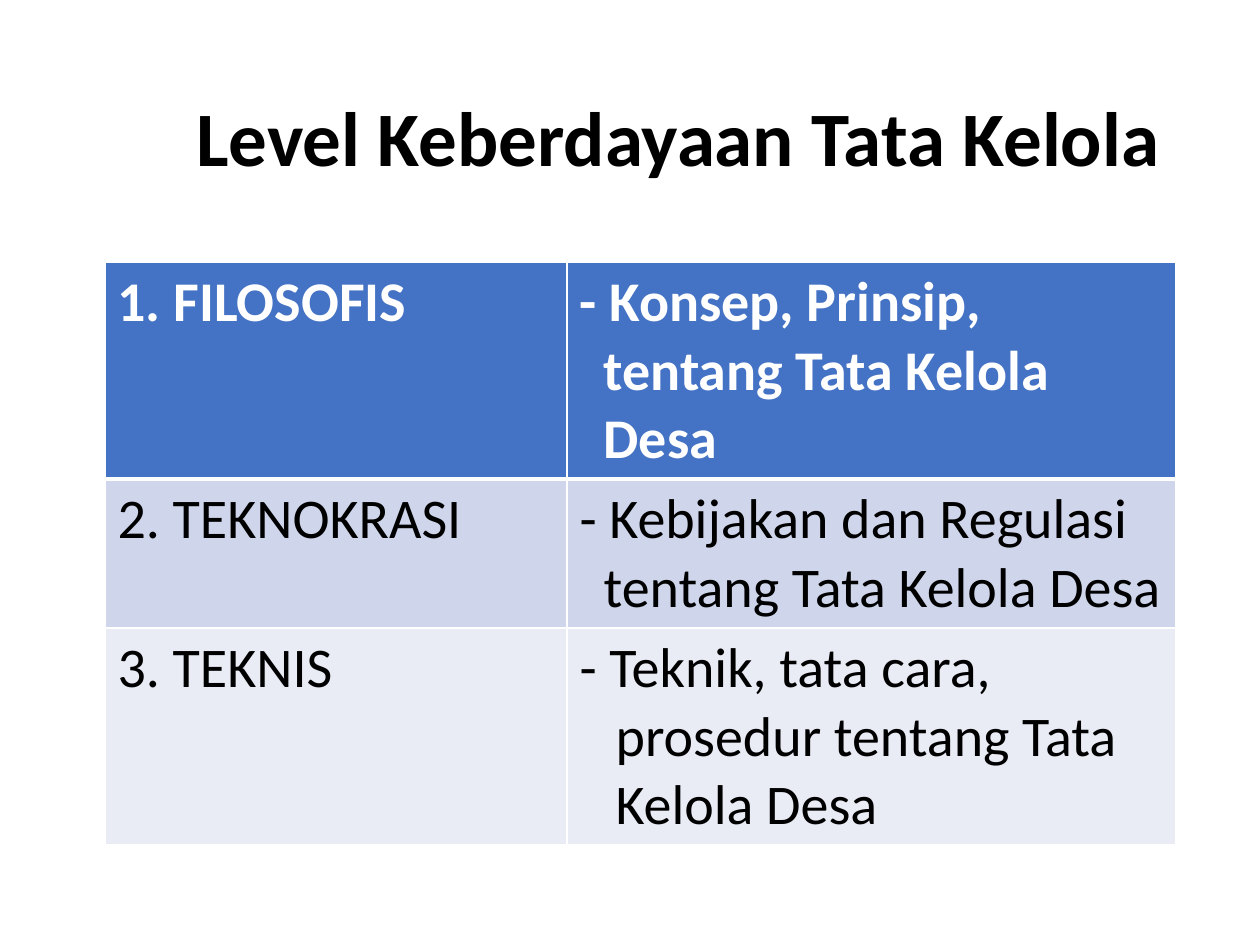
from dataclasses import dataclass

from lxml import etree
from pptx import Presentation
from pptx.dml.color import RGBColor
from pptx.enum.text import MSO_ANCHOR, PP_ALIGN
from pptx.oxml.ns import qn
from pptx.util import Emu, Pt

MIDDLE = MSO_ANCHOR.MIDDLE
RIGHT = PP_ALIGN.RIGHT
EMU_PER_PX = 914400 / 126
BLANK_LAYOUT = 6


@dataclass(frozen=True)
class Theme:
    font: str = "Calibri"
    title_size: int = 44
    cell_size: int = 32
    text: str = "000000"
    light: str = "FFFFFF"
    header_fill: str = "4472C4"
    row_fills: tuple = ("CFD5EA", "E9EBF5")
    border: float = 1
    header_border: float = 3


THEME = Theme()

TITLE = "Level Keberdayaan Tata Kelola"
# Level, explanation, hanging indent of the explanation, row height
LEVELS = [
    ("1. FILOSOFIS", "- Konsep, Prinsip, tentang Tata Kelola Desa", 24, 217),
    ("2. TEKNOKRASI", "- Kebijakan dan Regulasi tentang Tata Kelola Desa", 24, 149),
    ("3. TEKNIS", "- Teknik, tata cara, prosedur tentang Tata Kelola Desa", 36, 217),
]
LEVEL_COLUMN = 462


def px(length):
    return Emu(round(length * EMU_PER_PX))


def write(paragraph, text, size, color, bold):
    run = paragraph.add_run()
    run.text = text
    values = {"name": THEME.font, "size": Pt(size), "bold": bold}
    for name, value in values.items():
        setattr(run.font, name, value)
    run.font.color.rgb = RGBColor.from_string(color)


def hang(paragraph, indent):
    """Indent all lines of the paragraph but the first."""
    properties = paragraph._p.get_or_add_pPr()
    properties.set("marL", str(px(indent)))
    properties.set("indent", str(-px(indent)))


def add_borders(cell, widths):
    properties = cell._tc.get_or_add_tcPr()
    for side, width in widths.items():
        line = etree.SubElement(properties, qn(f"a:ln{side}"), w=str(Pt(width)))
        fill = etree.SubElement(line, qn("a:solidFill"))
        etree.SubElement(fill, qn("a:srgbClr"), val=THEME.light)


def add_title(slide, left, top, width, height):
    box = slide.shapes.add_textbox(px(left), px(top), px(width), px(height))
    frame = box.text_frame
    frame.word_wrap = True
    frame.vertical_anchor = MIDDLE
    paragraph = frame.paragraphs[0]
    paragraph.alignment = RIGHT
    paragraph.line_spacing = 0.9
    write(paragraph, TITLE, THEME.title_size, THEME.text, True)


def add_level_table(slide, left, top, width):
    heights = [level[-1] for level in LEVELS]
    table = slide.shapes.add_table(
        len(LEVELS), 2, px(left), px(top), px(width), px(sum(heights))
    ).table
    table.columns[0].width = px(LEVEL_COLUMN)
    table.columns[1].width = px(width - LEVEL_COLUMN)

    for index, (level, explanation, indent, height) in enumerate(LEVELS):
        table.rows[index].height = px(height)
        header = index == 0
        fill = THEME.header_fill if header else THEME.row_fills[(index - 1) % 2]
        color = THEME.light if header else THEME.text
        widths = dict.fromkeys("LRTB", THEME.border)
        if header:
            widths["B"] = THEME.header_border
        elif index == 1:
            widths["T"] = THEME.header_border
        for column, text in enumerate((level, explanation)):
            cell = table.cell(index, column)
            add_borders(cell, widths)
            cell.fill.solid()
            cell.fill.fore_color.rgb = RGBColor.from_string(fill)
            paragraph = cell.text_frame.paragraphs[0]
            if column == 1:
                hang(paragraph, indent)
            write(paragraph, text, THEME.cell_size, color, header)


def main():
    presentation = Presentation()
    presentation.slide_width = px(1260)
    presentation.slide_height = px(945)
    slide = presentation.slides.add_slide(presentation.slide_layouts[BLANK_LAYOUT])
    add_title(slide, 87, 50, 1086, 183)
    add_level_table(slide, 105, 262, 1071)
    presentation.save("out.pptx")


if __name__ == "__main__":
    main()
